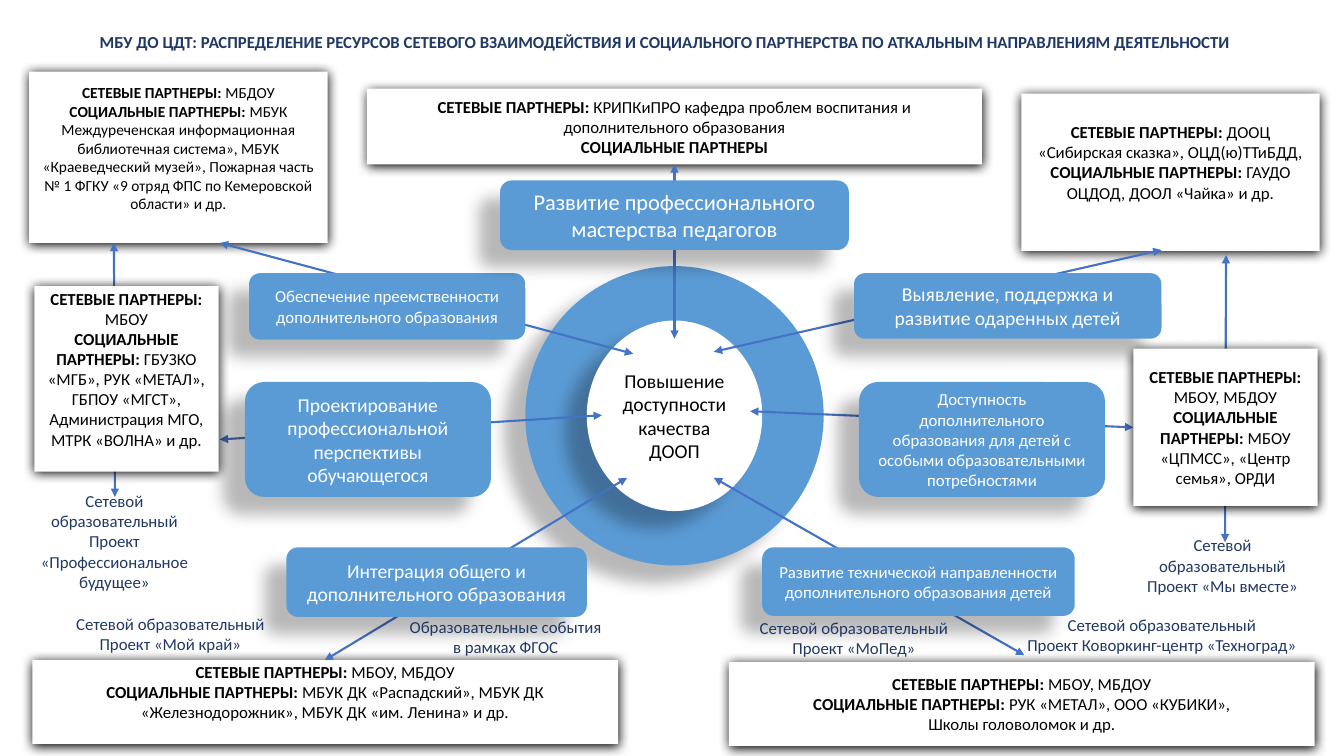
from dataclasses import dataclass
from lxml.etree import SubElement
from pptx import Presentation
from pptx.dml.color import RGBColor
from pptx.enum.shapes import MSO_CONNECTOR, MSO_SHAPE
from pptx.enum.text import MSO_ANCHOR, PP_ALIGN
from pptx.oxml.ns import qn
from pptx.util import Inches, Pt


@dataclass(frozen=True)
class Theme:
    font: str = "Calibri"
    white: str = "FFFFFF"
    black: str = "000000"
    blue: str = "5B9BD5"
    line: str = "4472C4"
    navy: str = "203864"
    small: int = 11
    body: int = 12
    medium: int = 14
    large: int = 16
    line_width: float = 1.5
    # Shadows: opacity %, blur pt, distance pt, direction in degrees
    card_shadow: tuple = (100, 8.5, 1, 90)
    soft_shadow: tuple = (28, 11.8, 19.7, 141)


T = Theme()

# Content
TITLE = ("МБУ ДО ЦДТ: РАСПРЕДЕЛЕНИЕ РЕСУРСОВ СЕТЕВОГО ВЗАИМОДЕЙСТВИЯ И СОЦИАЛЬНОГО "
         "ПАРТНЕРСТВА ПО АТКАЛЬНЫМ НАПРАВЛЕНИЯМ ДЕЯТЕЛЬНОСТИ")
GOAL = "Повышение доступности качества ДООП"
NET, SOC = "СЕТЕВЫЕ ПАРТНЕРЫ:", "СОЦИАЛЬНЫЕ ПАРТНЕРЫ:"
PROJECT = "Сетевой образовательный"

# Partner cards: box, type size, free lines below the text, (bold label, text) paragraphs
OUTER_CARDS = [
    ((10.13, 0.93, 2.96, 1.56), T.body, 1, [
        (NET, " ДООЦ «Сибирская сказка», ОЦД(ю)ТТиБДД,"),
        (SOC, " ГАУДО ОЦДОД, ДООЛ «Чайка» и др.")]),
    ((0.29, 0.71, 2.96, 1.7), T.small, 1, [
        (NET, " МБДОУ"),
        (SOC, " МБУК Междуреченская информационная библиотечная система», МБУК "
              "«Краеведческий музей», Пожарная часть № 1 ФГКУ «9 отряд ФПС по "
              "Кемеровской области» и др.")]),
    ((3.64, 0.88, 6.1, 0.75), T.body, 0, [
        (NET, " КРИПКиПРО кафедра проблем воспитания и дополнительного образования"),
        ("СОЦИАЛЬНЫЕ ПАРТНЕРЫ", "")]),
    ((0.32, 6.55, 5.81, 0.83), T.body, 1, [
        (NET, " МБОУ, МБДОУ"),
        (SOC, " МБУК ДК «Распадский», МБУК ДК «Железнодорожник», "
              "МБУК ДК «им. Ленина» и др.")]),
    ((7.23, 6.57, 5.81, 0.83), T.body, 0, [
        (NET, " МБОУ, МБДОУ"),
        (SOC, " РУК «МЕТАЛ», ООО «КУБИКИ»,"),
        ("", "Школы головоломок и др.")]),
]
SIDE_CARDS = [
    ((0.34, 2.84, 1.83, 1.84), T.body, 1, [
        (NET, " МБОУ"),
        (SOC, " ГБУЗКО «МГБ», РУК «МЕТАЛ», ГБПОУ «МГСТ», Администрация МГО, "
              "МТРК «ВОЛНА» и др.")]),
    ((11.24, 3.46, 1.83, 1.56), T.body, 0, [
        (NET, ""),
        ("", "МБОУ, МБДОУ"),
        (SOC, " МБОУ «ЦПМСС», «Центр семья», ОРДИ")]),
]

# Directions of work: box, type size, text
DIRECTIONS = [
    ((2.47, 2.71, 2.74, 0.66), T.body,
     "Обеспечение преемственности дополнительного образования"),
    ((8.47, 2.71, 3.05, 0.65), T.medium,
     "Выявление, поддержка и развитие одаренных детей"),
    ((4.96, 1.79, 3.46, 0.69), T.large,
     "Развитие профессионального мастерства педагогов"),
    ((2.43, 3.79, 2.44, 1.14), T.medium,
     "Проектирование профессиональной перспективы обучающегося"),
    ((8.52, 3.79, 2.44, 1.14), T.body,
     "Доступность дополнительного образования для детей с особыми "
     "образовательными потребностями"),
    ((2.84, 5.43, 2.98, 0.69), T.medium,
     "Интеграция общего и дополнительного образования"),
    ((7.56, 5.43, 3.1, 0.68), T.body,
     "Развитие технической направленности дополнительного образования детей"),
]

# Arrows: start x, y, end x, y
ARROWS = [
    (6.28, 3.51, 2.18, 2.41),
    (7.08, 3.49, 11.52, 2.48),
    (6.69, 1.63, 6.69, 3.36),
    (2.18, 4.36, 5.97, 4.12),
    (11.24, 4.24, 7.44, 4.08),
    (3.22, 6.55, 6.22, 4.74),
    (10.16, 6.5, 7.08, 4.74),
    (1.13, 2.41, 1.14, 4.93),
    (12.16, 2.53, 12.15, 5.38),
]

# Project captions: box, paragraphs
CAPTIONS = [
    ((0.23, 4.82, 1.81, 1.11), [PROJECT, "Проект «Профессиональное будущее»"]),
    ((11.22, 5.26, 1.81, 0.71), [PROJECT, "Проект «Мы вместе»"]),
    ((0.33, 6.04, 2.72, 0.5), [PROJECT, "Проект «Мой край»"]),
    ((3.79, 6.07, 2.45, 0.5), ["Образовательные события", "в рамках ФГОС"]),
    ((7.11, 6.08, 2.72, 0.5), [PROJECT, "Проект «МоПед»"]),
    ((9.96, 6.05, 3.13, 0.5), [PROJECT, "Проект Коворкинг-центр «Техноград»"]),
]


def rgb(color):
    return RGBColor.from_string(color)


def write(sp, paragraphs, size, color, align=PP_ALIGN.CENTER, bold=None, wrap=True):
    """Fill a shape with paragraphs given as (bold label, text) pairs."""
    tf = sp.text_frame
    tf.word_wrap = wrap
    for i, (label, text) in enumerate(paragraphs):
        p = tf.add_paragraph() if i else tf.paragraphs[0]
        p.alignment = align
        p.font.name, p.font.size, p.font.bold = T.font, Pt(size), bold
        p.font.color.rgb = rgb(color)
        if label:
            r = p.add_run()
            r.text, r.font.bold = label, True
        if text:
            p.add_run().text = text
    return tf


def add_shadow(sp, opacity, blur, distance, direction):
    sp.shadow.inherit = False
    effects = sp._element.spPr.find(qn("a:effectLst"))
    shadow = SubElement(effects, qn("a:outerShdw"), blurRad=str(Pt(blur)),
                        dist=str(Pt(distance)), dir=str(direction * 60000),
                        algn="ctr", rotWithShape="0")
    color = SubElement(shadow, qn("a:srgbClr"), val=T.black)
    SubElement(color, qn("a:alpha"), val=str(opacity * 1000))


def add_block(s, kind, box, fill, shadow):
    sp = s.shapes.add_shape(kind, *map(Inches, box))
    sp.fill.solid()
    sp.fill.fore_color.rgb = rgb(fill)
    sp.line.fill.background()
    add_shadow(sp, *shadow)
    sp.text_frame.vertical_anchor = MSO_ANCHOR.MIDDLE
    return sp


def add_arrow(s, ends):
    line = s.shapes.add_connector(MSO_CONNECTOR.STRAIGHT, *map(Inches, ends))
    line.line.color.rgb = rgb(T.line)
    line.line.width = Pt(T.line_width)
    ln = line.line._get_or_add_ln()
    for end in ("a:headEnd", "a:tailEnd"):
        SubElement(ln, qn(end), type="triangle")
    SubElement(line._element.spPr, qn("a:effectLst"))


def add_card(s, box, size, free_lines, paragraphs):
    sp = add_block(s, MSO_SHAPE.RECTANGLE, box, T.white, T.card_shadow)
    tf = write(sp, paragraphs, size, T.black)
    tf.margin_bottom = Inches(0.05) + free_lines * Pt(size * 1.2)


def main():
    prs = Presentation()
    prs.slide_width, prs.slide_height = Inches(13.33), Inches(7.5)
    s = prs.slides.add_slide(prs.slide_layouts[6])

    # Central ring with the goal
    add_block(s, MSO_SHAPE.OVAL, (5.21, 2.64, 2.96, 2.97), T.blue, T.soft_shadow)
    goal = add_block(s, MSO_SHAPE.OVAL, (5.82, 3.18, 1.74, 1.89), T.white, T.soft_shadow)
    write(goal, [("", GOAL)], T.medium, T.black)

    # Title
    title = s.shapes.add_textbox(*map(Inches, (0.89, 0.27, 11.56, 0.3)))
    write(title, [("", TITLE)], T.body, T.navy, PP_ALIGN.LEFT, bold=True, wrap=False)

    # Arrows lie over the outer cards, under the directions and side cards
    for card in OUTER_CARDS:
        add_card(s, *card)
    for ends in ARROWS:
        add_arrow(s, ends)
    for box, size, text in DIRECTIONS:
        sp = add_block(s, MSO_SHAPE.ROUNDED_RECTANGLE, box, T.blue, T.soft_shadow)
        write(sp, [("", text)], size, T.white)
    for card in SIDE_CARDS:
        add_card(s, *card)

    # Project captions
    for box, lines in CAPTIONS:
        caption = s.shapes.add_textbox(*map(Inches, box))
        write(caption, [("", text) for text in lines], T.body, T.navy)

    prs.save("out.pptx")


if __name__ == "__main__":
    main()
